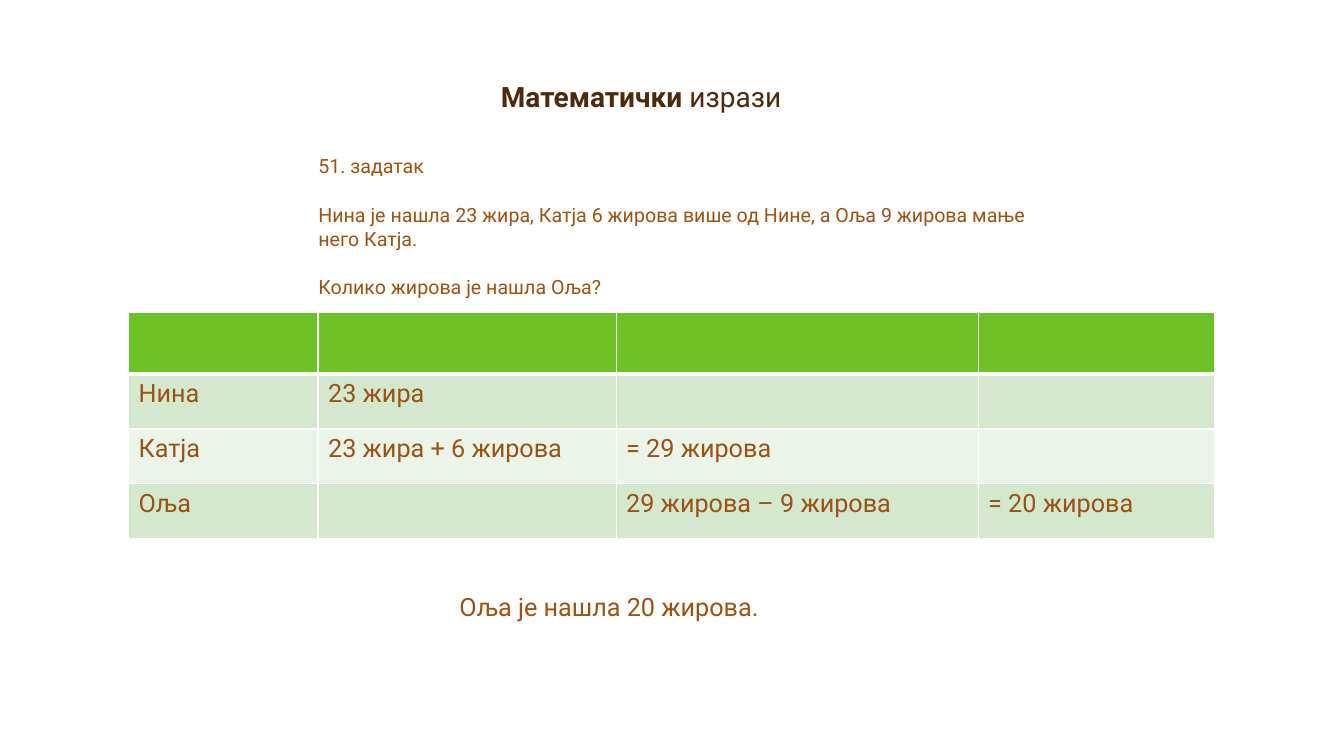
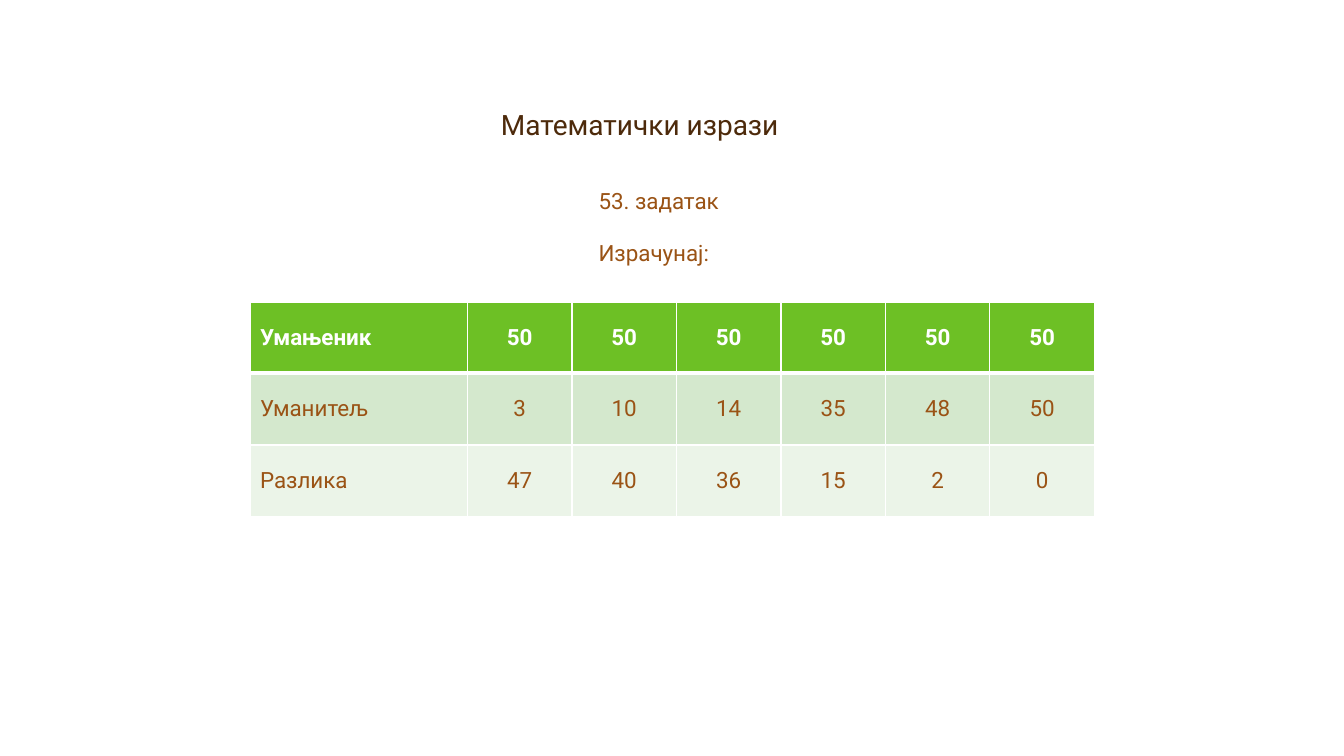
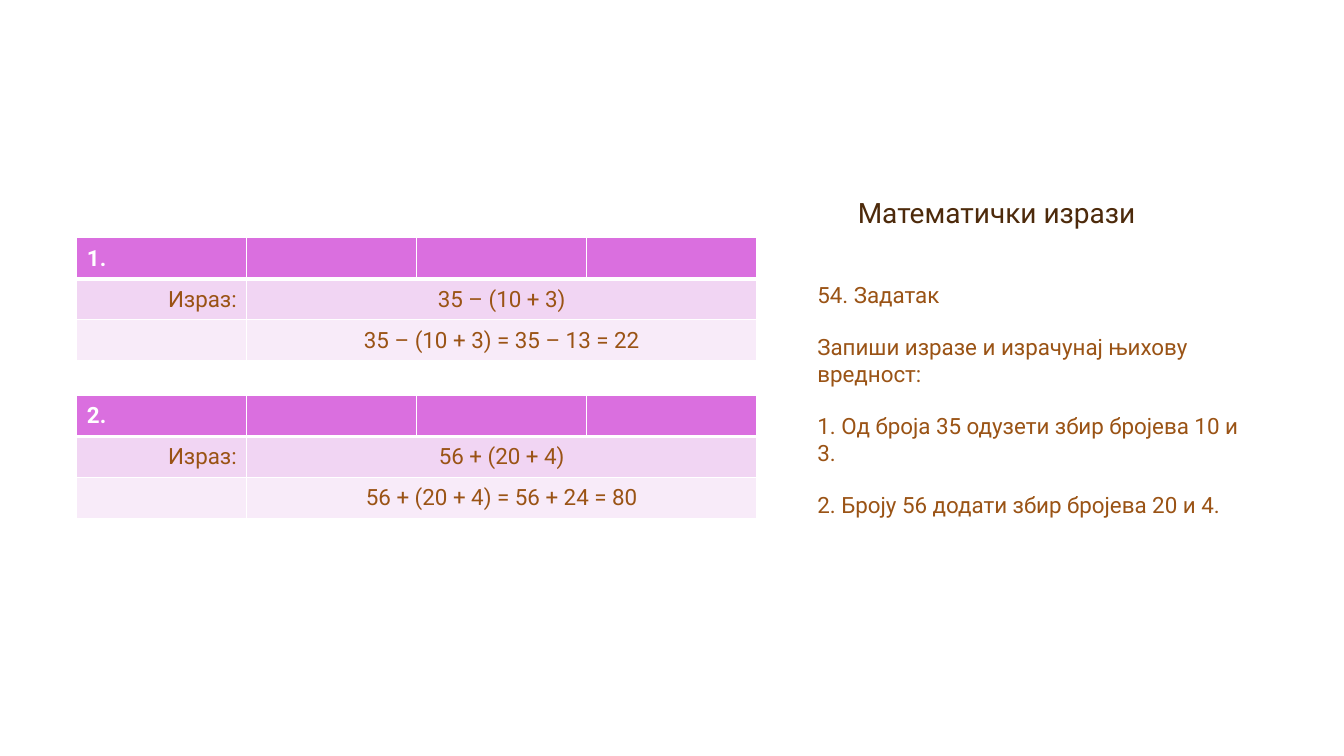
"""Build three slides of worked maths exercises with tables."""
import pptx
import pptx.util
import pptx.dml.color
import pptx.enum.text
import pptx.oxml
from pptx.oxml import ns

Pt = pptx.util.Pt
ALIGN = pptx.enum.text.PP_ALIGN
ANCHOR = pptx.enum.text.MSO_ANCHOR

FONT = "Roboto"
COLORS = {"title": "4D2A0B", "text": "9A5315", "white": "FFFFFF"}
GREEN = {"head": "6DC025", "odd": "D4E8CD", "even": "EBF4E8"}
PINK = {"head": "DA6FDF", "odd": "F1D5F3", "even": "F8EBF9"}
ALIGNS = {"l": ALIGN.LEFT, "c": ALIGN.CENTER, "r": ALIGN.RIGHT}
TITLE_SIZE = (258.5, 52.5)

EXPRESSIONS = [
    ("1.", "35 – (10 + 3)", "35 – (10 + 3) = 35 – 13 = 22"),
    ("2.", "56 + (20 + 4)", "56 + (20 + 4) = 56 + 24 = 80"),
]

SLIDES = [
    {
        "title": [("Математички", True), (" изрази", False)],
        "title_at": (350.6, 32.4),
        "texts": [
            {"box": (220.3, 106.6, 533.5, 116.6), "size": 14, "paras": [
                "51. задатак",
                "Нина је нашла 23 жира, Катја 6 жирова више од Нине, а Оља 9 жирова мање него Катја.",
                "Колико жирова је нашла Оља?"]},
            {"box": (321.1, 419, 262, 28.8), "size": 18, "paras": ["Оља је нашла 20 жирова."]},
        ],
        "tables": [{
            "at": (91.8, 223.4), "cols": [135.4, 212.9, 258.6, 168.9],
            "rows": [43.9] + [39.2] * 3, "palette": GREEN, "size": 18,
            "anchor": ANCHOR.TOP, "head_align": "llll", "body_align": "llll",
            "cells": [
                ["", "", "", ""],
                ["Нина", "23 жира", "", ""],
                ["Катја", "23 жира + 6 жирова", "= 29 жирова", ""],
                ["Оља", "", "29 жирова – 9 жирова", "= 20 жирова"],
            ],
        }],
    },
    {
        "title": [("Математички изрази", False)],
        "title_at": (350.6, 52.5),
        "texts": [{"box": (420.5, 130.3, 118.8, 61.2), "size": 16,
                   "paras": ["53. задатак", "Израчунај:"]}],
        "tables": [{
            "at": (178.6, 216), "cols": [155.3] + [74.65] * 6,
            "rows": [50.6, 51.3, 51.3], "palette": GREEN, "size": 16,
            "head_align": "lcccccc", "body_align": "lcccccc",
            "cells": [
                ["Умањеник"] + ["50"] * 6,
                ["Уманитељ", "3", "10", "14", "35", "48", "50"],
                ["Разлика", "47", "40", "36", "15", "2", "0"],
            ],
        }],
    },
    {
        "title": [("Математички изрази", False)],
        "title_at": (605.5, 115.2),
        "texts": [{"box": (576.7, 197.3, 330.5, 196.6), "size": 16, "paras": [
            "54. Задатак",
            "Запиши изразе и израчунај њихову вредност:",
            "1. Од броја 35 одузети збир бројева 10 и 3.",
            "2. Броју 56 додати збир бројева 20 и 4."]}],
        "tables": [{
            "at": (54.9, 169.9 + 112.6 * i), "cols": [121.4] * 4,
            "rows": [29.3] * 3, "palette": PINK, "size": 16,
            "head_align": "lccc", "body_align": "rccc", "merge_from": 1,
            "cells": [[number, "", "", ""],
                      ["Израз:", expression, "", ""],
                      ["", solution, "", ""]],
        } for i, (number, expression, solution) in enumerate(EXPRESSIONS)],
    },
]


def rgb(value):
    return pptx.dml.color.RGBColor.from_string(value)


def write(tf, paras, size, color="text", bold=False, align="l", before=0, line=None):
    for i, para in enumerate(paras):
        p = tf.paragraphs[0] if i == 0 else tf.add_paragraph()
        p.alignment = ALIGNS[align]
        p.space_before = Pt(before if i else 0)
        if line:
            p.line_spacing = line
        for text, strong in [(para, bold)] if isinstance(para, str) else para:
            r = p.add_run()
            r.text = text
            r.font.name = FONT
            r.font.size = Pt(size)
            r.font.bold = strong
            r.font.color.rgb = rgb(COLORS[color])


def add_title(s, runs, at):
    sp = s.shapes.title
    sp.left, sp.top, sp.width, sp.height = (Pt(v) for v in at + TITLE_SIZE)
    tf = sp.text_frame
    tf.auto_size = pptx.enum.text.MSO_AUTO_SIZE.NONE
    tf.vertical_anchor = ANCHOR.BOTTOM
    write(tf, [runs], 20, color="title", line=0.9)


def add_text(s, box, size, paras):
    tf = s.shapes.add_textbox(*(Pt(v) for v in box)).text_frame
    tf.word_wrap = True
    write(tf, paras, size, before=18)


def set_borders(cell, widths):
    tcPr = cell._tc.get_or_add_tcPr()
    for side, width in widths.items():
        tcPr.append(pptx.oxml.parse_xml(
            f'<a:ln{side} {ns.nsdecls("a")} w="{Pt(width)}"><a:solidFill>'
            f'<a:srgbClr val="{COLORS["white"]}"/></a:solidFill></a:ln{side}>'))


def add_table(s, at, cols, rows, palette, size, cells, head_align, body_align,
              anchor=ANCHOR.MIDDLE, merge_from=None):
    frame = s.shapes.add_table(len(rows), len(cols), *(Pt(v) for v in at),
                               Pt(sum(cols)), Pt(sum(rows)))
    table = frame.table
    for column, width in zip(table.columns, cols):
        column.width = Pt(width)
    for i, (row, height) in enumerate(zip(table.rows, rows)):
        row.height = Pt(height)
        head = i == 0
        band = "head" if head else "odd" if i % 2 else "even"
        for j, cell in enumerate(row.cells):
            set_borders(cell, {"L": 1, "R": 1, "T": 3 if i == 1 else 1, "B": 3 if head else 1})
            cell.fill.solid()
            cell.fill.fore_color.rgb = rgb(palette[band])
            cell.vertical_anchor = anchor
            if cells[i][j]:
                write(cell.text_frame, [cells[i][j]], size, bold=head,
                      color="white" if head else "text",
                      align=(head_align if head else body_align)[j])
        if merge_from and not head:
            table.cell(i, merge_from).merge(table.cell(i, len(cols) - 1))


def main():
    prs = pptx.Presentation()
    prs.slide_width, prs.slide_height = Pt(960), Pt(540)
    for content in SLIDES:
        s = prs.slides.add_slide(prs.slide_layouts[5])
        add_title(s, content["title"], content["title_at"])
        for text in content["texts"]:
            add_text(s, **text)
        for table in content["tables"]:
            add_table(s, **table)
    prs.save("out.pptx")


if __name__ == "__main__":
    main()
